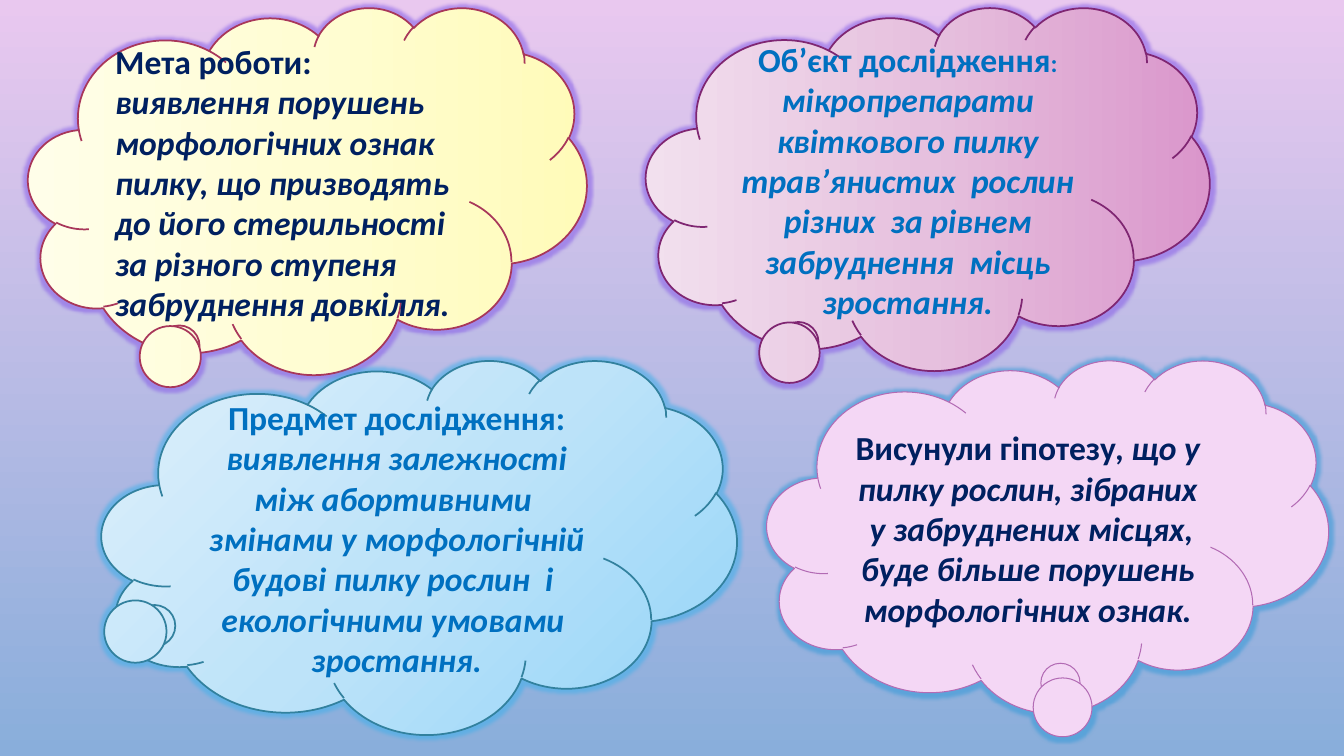
from lxml.etree import SubElement
from pptx import Presentation
from pptx.dml.color import RGBColor
from pptx.enum.shapes import MSO_SHAPE
from pptx.enum.text import MSO_ANCHOR, PP_ALIGN
from pptx.oxml import parse_xml
from pptx.oxml.ns import nsdecls, qn
from pptx.util import Pt


def color(hex_string):
    return RGBColor.from_string(hex_string)


def set_gradient(fill, stops, direction):
    """Fill with (percent, colour) stops; direction is an a:lin or a:path element."""
    fill.gradient()
    gradient = fill._fill._gradFill
    for child in list(gradient):
        gradient.remove(child)
    stop_list = SubElement(gradient, qn("a:gsLst"))
    for percent, hex_string in stops:
        stop = SubElement(stop_list, qn("a:gs"), pos=str(percent * 1000))
        SubElement(stop, qn("a:srgbClr"), val=hex_string)
    gradient.append(parse_xml(direction.replace(" ", f" {nsdecls('a')} ", 1)))


DOWNWARD = '<a:lin ang="5400000" scaled="0"/>'
LEFTWARD = '<a:lin ang="10800000" scaled="0"/>'
FROM_CORNER = '<a:path path="circle"><a:fillToRect l="100000" t="100000"/></a:path>'
FROM_CORNER = FROM_CORNER.replace('path="circle"', 'path="circle" ', 1)

presentation = Presentation()
presentation.slide_width, presentation.slide_height = Pt(960), Pt(540)
slide = presentation.slides.add_slide(presentation.slide_layouts[6])

# Background
set_gradient(slide.background.fill, [(0, "E9C8EF"), (31, "E9C8EF"), (100, "89AEDB")][::2], DOWNWARD)

# Clouds: box, tail, fill colours, direction, outline, glow, alignment, text colour, runs
# Each run: text, size, italic
clouds = [
    ((20.2, 5, 398.9, 262.1), (-0.237, 0.437), ["FFFBB9", "FFFDD3", "FFFEE9"], LEFTWARD,
     ("A8375A", 1.25), "8A63E8", PP_ALIGN.LEFT, "002060",
     [("Мета роботи:  ", 24, False),
      ("виявлення порушень морфологічних ознак пилку, що призводять до його "
       "стерильності  за різного ступеня  забруднення довкілля.", 24, True)]),
    ((461.5, 5, 402.5, 259.2), (-0.237, 0.437), ["DA96CB", "E6C0DE", "F2E0EE"], LEFTWARD,
     ("7F2672", 1.25), "8A63E8", PP_ALIGN.CENTER, "0070C0",
     [("Об’єкт дослідження", 24, False), (": ", 18, False),
      ("мікропрепарати квіткового пилку трав’янистих  рослин різних  за рівнем "
       "забруднення  місць зростання.", 24, True)]),
    ((72.7, 257, 453.6, 267.1), (-0.418, 0.212), ["93D4F8", "BDE3F9", "DFF0FB"], FROM_CORNER,
     ("32819E", 1.25), "45B0EA", PP_ALIGN.CENTER, "0070C0",
     [("Предмет дослідження: ", 24, False),
      ("виявлення залежності між абортивними  змінами у морфологічній будові "
       "пилку рослин  і  екологічними умовами  зростання.", 24, True)]),
    ((547.9, 257, 401, 252), (0.022, 0.402), ["F4D7F5"], None,
     ("B26BB4", 0.75), "3A9BD8", PP_ALIGN.CENTER, "002060",
     [("Висунули гіпотезу, ", 24, False),
      ("що у пилку рослин, зібраних  у забруднених місцях, буде більше порушень "
       "морфологічних ознак.", 24, True)]),
]

for box, tail, fills, direction, outline, glow, alignment, text_color, runs in clouds:
    cloud = slide.shapes.add_shape(MSO_SHAPE.CLOUD_CALLOUT, *[Pt(length) for length in box])
    cloud.adjustments[0], cloud.adjustments[1] = tail
    if direction:
        set_gradient(cloud.fill, list(zip((0, 50, 100), fills)), direction)
    else:
        cloud.fill.solid()
        cloud.fill.fore_color.rgb = color(fills[0])
    cloud.line.color.rgb = color(outline[0])
    cloud.line.width = Pt(outline[1])

    # Soft glow in place of the shadow
    cloud.shadow.inherit = False
    effects = cloud._element.spPr.find(qn("a:effectLst"))
    halo = SubElement(effects, qn("a:glow"), rad=str(Pt(5)))
    halo_color = SubElement(halo, qn("a:srgbClr"), val=glow)
    SubElement(halo_color, qn("a:alpha"), val="60000")

    # Text
    cloud.text_frame.word_wrap = True
    cloud.text_frame.vertical_anchor = MSO_ANCHOR.MIDDLE
    paragraph = cloud.text_frame.paragraphs[0]
    paragraph.alignment = alignment
    paragraph.font.name = "Calibri"
    paragraph.font.bold = True
    paragraph.font.color.rgb = color(text_color)
    for text, size, italic in runs:
        run = paragraph.add_run()
        run.text = text
        run.font.size = Pt(size)
        run.font.italic = italic

presentation.save("out.pptx")
